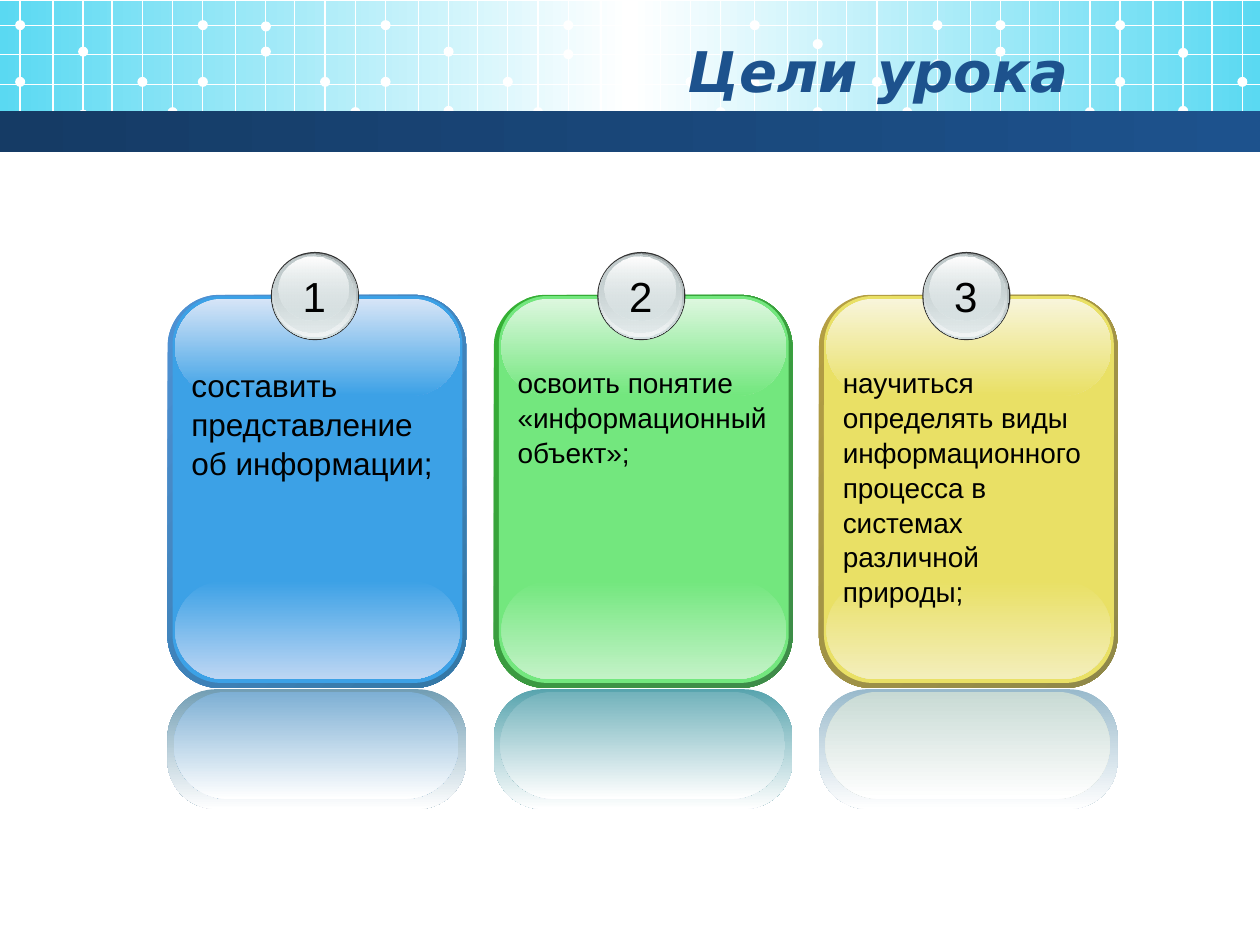
import lxml.etree
import pptx
import pptx.dml.color
import pptx.enum.shapes
import pptx.enum.text
import pptx.oxml.ns
import pptx.util

Inches = pptx.util.Inches
SHAPE = pptx.enum.shapes.MSO_SHAPE
ALIGN = pptx.enum.text.PP_ALIGN
qn = pptx.oxml.ns.qn

COLORS = {
    "white": "FFFFFF", "black": "000000", "sky": "5AD9F2",
    "navy": "153B65", "blue": "1D528D", "rim": "333333",
    "steel": "99A1A2", "silver": "D6E1E2", "pearl": "F2F5F5", "ash": "C1CBCC",
    "card1": "3CA1E6", "edge1a": "4E91D4", "edge1b": "3477A4",
    "top1": "D7E5F7", "bottom1": "BDD6F3", "mirror1a": "729EB4", "mirror1b": "7DAFD4",
    "card2": "73E77E", "edge2a": "34B034", "edge2b": "3F8B4A",
    "top2": "DDF7DF", "bottom2": "C3F2C7", "mirror2a": "58A4AE", "mirror2b": "72B2BB",
    "card3": "E9E065", "edge3a": "B59F43", "edge3b": "8F8849",
    "top3": "F8F5DB", "bottom3": "F3EEBB", "mirror3a": "99BACC", "mirror3b": "C8DAD4",
}
TITLE = {"name": "DejaVu Sans", "size": 32, "color": "blue", "bold": True, "italic": True}
BODY = {"name": "Arial", "size": 16, "color": "black"}

GRID_STEPS = (0, 0.26, 0.5, 0.73, 0.97, 1.21)
GRID_CELLS = [
    (0.16, 0.61, 0.37, 0.87), (1.61, 0.61, 0.37, 0.17), (3.06, 0.61, 0.37, 0.84),
    (4.51, 0.39, 0.38, 0.16), (5.99, 0.62, 0.31, 0.85), (7.44, 0.47, 0.37, 0.16),
    (8.89, 0.61, 0.38, 0.84),
]
GRID_ROWS = (0.2, 0.43, 0.67, 0.89)
DOT = 0.08

CARDS = [
    (1.33, 18, 1.01, ["составить представление об информации;"]),
    (3.92, 16, 0.91, ["освоить понятие «информационный объект»;"]),
    (6.5, 16, 1.99, ["научиться определять виды информационного",
                     "процесса в системах различной природы;"]),
]
ORB_LAYERS = [
    (0, 0, 0.7, 0.7, "rim"),
    (0.01, 0.01, 0.68, 0.68, [("steel", 100), ("silver", 100)]),
    (0.01, 0.01, 0.66, 0.66, [("silver", 0), ("pearl", 100)]),
    (0.02, 0.02, 0.63, 0.62, [("ash", 100), ("silver", 48)]),
    (0.06, 0.04, 0.56, 0.5, [("white", 100), ("silver", 38)]),
]


class Deck:
    def __init__(self):
        self.prs = pptx.Presentation()
        self.prs.slide_width, self.prs.slide_height = Inches(10), Inches(7.5)
        self.s = self.prs.slides.add_slide(self.prs.slide_layouts[6])

    def rgb(self, key):
        return pptx.dml.color.RGBColor.from_string(COLORS[key])

    def gradient(self, sp, stops, angle):
        sp.fill.gradient()
        sp.fill.gradient_angle = 360 - angle if angle else 0
        stop_list = sp._element.spPr.find(qn("a:gradFill")).find(qn("a:gsLst"))
        for old in list(stop_list):
            stop_list.remove(old)
        for i, (key, alpha) in enumerate(stops):
            pos = 100000 * i // (len(stops) - 1)
            gs = lxml.etree.SubElement(stop_list, qn("a:gs"), pos=str(pos))
            clr = lxml.etree.SubElement(gs, qn("a:srgbClr"), val=COLORS[key])
            if alpha < 100:
                lxml.etree.SubElement(clr, qn("a:alpha"), val=str(alpha * 1000))

    def shape(self, kind, box, fill, angle=90, adj=None):
        sp = self.s.shapes.add_shape(kind, *map(Inches, box))
        sp.shadow.inherit = False
        sp.line.fill.background()
        if adj is not None:
            sp.adjustments[0] = adj
        if isinstance(fill, str):
            sp.fill.solid()
            sp.fill.fore_color.rgb = self.rgb(fill)
        else:
            self.gradient(sp, fill, angle)

    def line(self, *ends):
        ln = self.s.shapes.add_connector(
            pptx.enum.shapes.MSO_CONNECTOR.STRAIGHT, *map(Inches, ends))
        ln.line.color.rgb = self.rgb("white")
        ln.line.width = pptx.util.Pt(0.75)
        lxml.etree.SubElement(ln._element.spPr, qn("a:effectLst"))

    def text(self, box, paragraphs, style, align=ALIGN.LEFT, wrap=True, middle=False, spacing=1.0):
        tf = self.s.shapes.add_textbox(*map(Inches, box)).text_frame
        tf.word_wrap = wrap
        if middle:
            tf.vertical_anchor = pptx.enum.text.MSO_ANCHOR.MIDDLE
        for i, content in enumerate(paragraphs):
            p = tf.add_paragraph() if i else tf.paragraphs[0]
            p.alignment, p.line_spacing = align, spacing
            r = p.add_run()
            r.text = content
            for key, value in style.items():
                if key == "color":
                    r.font.color.rgb = self.rgb(value)
                else:
                    setattr(r.font, key, pptx.util.Pt(value) if key == "size" else value)

    def dot(self, x, y):
        self.shape(SHAPE.OVAL, (x - DOT / 2, y, DOT, DOT), "white")

    def header(self):
        self.shape(SHAPE.RECTANGLE, (0, 0.01, 10, 1.02),
                   [("sky", 100), ("white", 100), ("sky", 100)], 0)
        for x, first, middle, low in GRID_CELLS:
            columns = [x + step for step in GRID_STEPS if x + step < 10]
            for column in columns:
                self.line(column, 0, column, 1.1)
            second = 0.16
            for step, y in ((0, first), (0, second), (0.5, middle),
                            (0.5, low), (0.97, 0.61), (1.21, 0.85)):
                if x + step < 10:
                    self.dot(x + step, y)
        for y in GRID_ROWS:
            self.line(0, y, 10, y)
        self.shape(SHAPE.RECTANGLE, (0, 0.88, 10, 0.33), [("navy", 100), ("blue", 100)], 0)
        self.text((0.5, 0.25, 8.08, 0.62), ["Цели урока"], TITLE, ALIGN.RIGHT, middle=True)

    def card(self, number, x, size, height, paragraphs):
        def fade(start, end):
            return [(start, 100), (end, 100)]

        n = str(number)
        face = "card" + n
        for dx, y, w, h, adj, fill, angle in (
            (0, 2.34, 2.37, 3.12, 0.175, fade(f"edge{n}a", f"edge{n}b"), 45),
            (0.04, 2.35, 2.3, 3.07, 0.167, face, 90),
            (0.06, 4.61, 2.26, 0.78, 0.5, fade(face, "bottom" + n), 90),
            (0.06, 2.37, 2.26, 0.77, 0.5, fade("top" + n, face), 90),
            (0, 5.47, 2.37, 0.95, 0.404, fade(f"mirror{n}a", "white"), 90),
            (0.05, 5.49, 2.26, 0.85, 0.5, fade(f"mirror{n}b", "white"), 90),
        ):
            self.shape(SHAPE.ROUNDED_RECTANGLE, (x + dx, y, w, h), fill, angle, adj)
        for dx, dy, w, h, fill in ORB_LAYERS:
            self.shape(SHAPE.OVAL, (x + 0.82 + dx, 2 + dy, w, h), fill)
        self.text((x + 0.97, 2.1, 0.39, 0.5), [n], {**BODY, "size": 24},
                  ALIGN.CENTER, wrap=False)
        self.text((x + 0.09, 2.84, 2.25, height), paragraphs, {**BODY, "size": size},
                  spacing=1.04)


def main():
    deck = Deck()
    deck.header()
    for number, card in enumerate(CARDS, 1):
        deck.card(number, *card)
    deck.prs.save("out.pptx")


if __name__ == "__main__":
    main()
